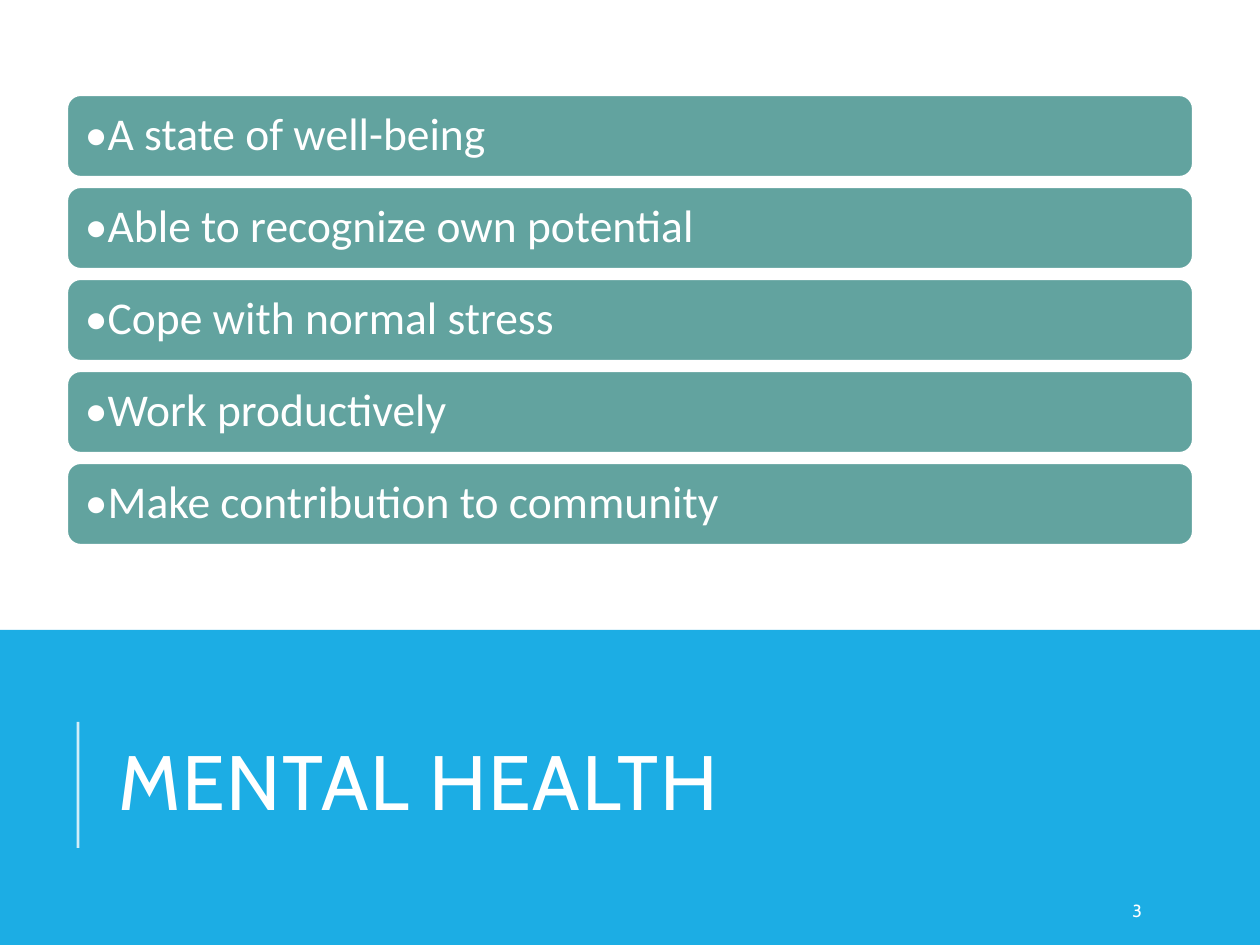
"""Build the Mental Health slide: five statement bars above a title band."""
from lxml import etree
from pptx import Presentation
from pptx.dml.color import RGBColor
from pptx.enum.shapes import MSO_CONNECTOR, MSO_SHAPE
from pptx.enum.text import MSO_ANCHOR, PP_ALIGN
from pptx.oxml.ns import qn
from pptx.util import Emu, Pt

RECTANGLE = MSO_SHAPE.RECTANGLE
ROUNDED = MSO_SHAPE.ROUNDED_RECTANGLE
STRAIGHT = MSO_CONNECTOR.STRAIGHT
MIDDLE = MSO_ANCHOR.MIDDLE
LEFT = PP_ALIGN.LEFT

COLORS = {name: RGBColor.from_string(code) for name, code in {
    "band": "1CADE4",
    "bar": "62A39F",
    "white": "FFFFFF",
}.items()}
STATEMENTS = [
    "•A state of well-being",
    "•Able to recognize own potential",
    "•Cope with normal stress",
    "•Work productively",
    "•Make contribution to community",
]
BAR_TOP, BAR_HEIGHT, BAR_PITCH = 95, 82, 92


def px(*lengths):
    return [Emu(round(length * 914400 / 126)) for length in lengths]


def write_text(shape, text, font_name, size, line_spacing=1.0):
    frame = shape.text_frame
    frame.word_wrap = True
    frame.vertical_anchor = MIDDLE
    paragraph = frame.paragraphs[0]
    paragraph.alignment = LEFT
    paragraph.line_spacing = line_spacing
    run = paragraph.add_run()
    run.text = text
    run.font.name = font_name
    run.font.size = Pt(size)
    run.font.color.rgb = COLORS["white"]
    return run


presentation = Presentation()
presentation.slide_width, presentation.slide_height = px(1260, 945)
slide = presentation.slides.add_slide(presentation.slide_layouts[6])
shapes = slide.shapes

band = shapes.add_shape(RECTANGLE, *px(0, 630, 1260, 315))
band.shadow.inherit = False
band.fill.solid()
band.fill.fore_color.rgb = COLORS["band"]
band.line.fill.background()

title = shapes.add_textbox(*px(106, 685, 1004, 207))
title_run = write_text(title, "MENTAL HEALTH", "Cabin", 44, 0.8)
title_run.font._element.set("spc", "100")

title_rule = shapes.add_connector(STRAIGHT, *px(78, 848, 78, 722))
title_rule.line.width = Pt(1.5)
title_rule.line.color.rgb = COLORS["white"]
rule_properties = title_rule._element.spPr
rule_color = next(rule_properties.iter(qn("a:srgbClr")))
etree.SubElement(rule_color, qn("a:alpha")).set("val", "80000")
etree.SubElement(rule_properties, qn("a:effectLst"))

page_number = shapes.add_textbox(*px(1120, 892, 101, 38))
write_text(page_number, "3", "Cabin", 10)

for index, statement in enumerate(STATEMENTS):
    bar = shapes.add_shape(
        ROUNDED, *px(67, BAR_TOP + index * BAR_PITCH, 1126, BAR_HEIGHT))
    bar.shadow.inherit = False
    bar.fill.solid()
    bar.fill.fore_color.rgb = COLORS["bar"]
    bar.line.color.rgb = COLORS["white"]
    bar.line.width = Pt(1.25)
    bar.text_frame.margin_left, bar.text_frame.margin_right = px(14, 14)
    write_text(bar, statement, "Calibri", 26, 0.9)

presentation.save("out.pptx")
